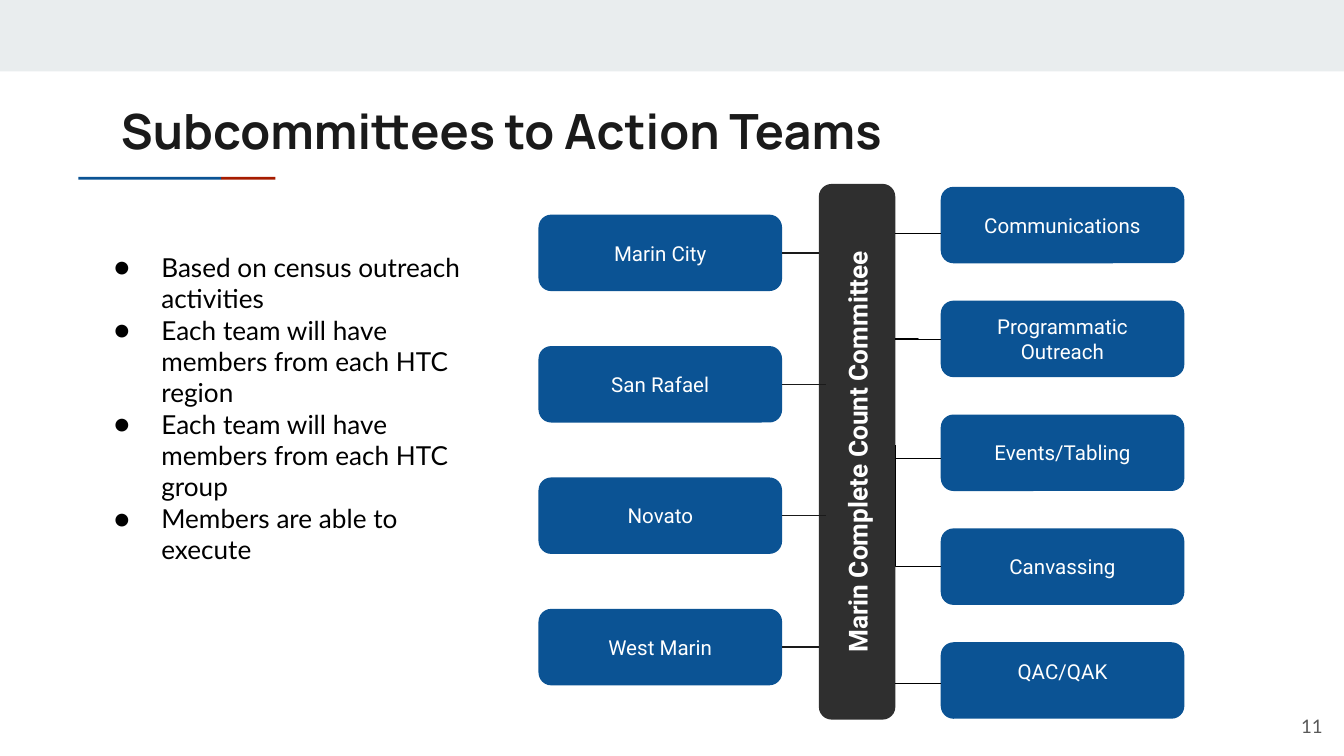
from lxml import etree
from pptx import Presentation
from pptx.dml.color import RGBColor
from pptx.enum import shapes, text
from pptx.oxml import ns
from pptx.util import Pt

# Content
TITLE = "Subcommittees to Action Teams"
POINTS = [
    "Based on census outreach activities",
    "Each team will have members from each HTC region",
    "Each team will have members from each HTC group",
    "Members are able to execute",
]
COMMITTEE = "Marin Complete Count Committee"
# Each region: name and where its line ends
REGIONS = [("Marin City", 438.7), ("San Rafael", 442.6),
           ("Novato", 442.3), ("West Marin", 438.7)]
TEAMS = ["Communications", "Programmatic Outreach", "Events/Tabling",
         "Canvassing", "QAC/QAK"]
# Start and end heights of the straight team lines
TEAM_LINES = [(125.2, 125.2), (181.7, 181.9), (245.5, 245.7), (366.3, 366.3)]
PAGE_NUMBER = "11"

BLUE, RED, DARK, INK = "0B5394", "A61C00", "2F2F2F", "1A1A1A"
BLACK, WHITE, GREY, BAND = "000000", "FFFFFF", "595959", "E9EDEE"

# Layout
BOX_W, BOX_H = 130.5, 41
REGION_X, REGION_TOP, REGION_STEP = 288.5, 115, 70.4
TEAM_X, TEAM_TOP, TEAM_STEP = 504, 100.1, 61
BAR_X, BAR_Y, BAR_W, BAR_H = 438.7, 98.5, 41, 287
BAR_RIGHT = BAR_X + BAR_W

deck = Presentation()
deck.slide_width, deck.slide_height = Pt(720), Pt(405)
page = deck.slides.add_slide(deck.slide_layouts[1])


def rgb(value):
    return RGBColor.from_string(value)


def style(para, font, size, color, bold=False, align=text.PP_ALIGN.LEFT):
    para.alignment = align
    for span in para.runs:
        span.font.name, span.font.size = font, Pt(size)
        span.font.bold, span.font.color.rgb = bold, rgb(color)


def set_frame(box, anchor=text.MSO_ANCHOR.MIDDLE):
    frame = box.text_frame
    frame.word_wrap, frame.auto_size = True, text.MSO_AUTO_SIZE.NONE
    frame.vertical_anchor = anchor
    frame.margin_left = frame.margin_right = Pt(7.2)
    frame.margin_top = frame.margin_bottom = Pt(7.2)
    return frame


def place(box, left, top, width, height):
    box.left, box.top = Pt(left), Pt(top)
    box.width, box.height = Pt(width), Pt(height)


def add_block(left, top, width, height, fill,
              kind=shapes.MSO_SHAPE.RECTANGLE):
    box = page.shapes.add_shape(kind, Pt(left), Pt(top), Pt(width), Pt(height))
    box.shadow.inherit = False
    box.fill.solid()
    box.fill.fore_color.rgb = rgb(fill)
    box.line.fill.background()
    return box


def add_label(label, left, top, width, height, fill, size=11, bold=False):
    box = add_block(left, top, width, height, fill,
                    shapes.MSO_SHAPE.ROUNDED_RECTANGLE)
    frame = set_frame(box)
    frame.text = label
    style(frame.paragraphs[0], "Roboto", size, WHITE, bold,
          text.PP_ALIGN.CENTER)
    return box


def add_line(x1, y1, x2, y2, color):
    line = page.shapes.add_connector(shapes.MSO_CONNECTOR.ELBOW,
                                     Pt(x1), Pt(y1), Pt(x2), Pt(y2))
    line.line.color.rgb, line.line.width = rgb(color), Pt(0.75)
    etree.SubElement(line._element.spPr, ns.qn("a:effectLst"))
    return line


# Top band and two-colour rule
add_block(0, 0, 720, 38.3, BAND)
add_block(118.5, 94.7, 29, 1.5, RED)
add_block(42, 94.7, 76.5, 1.5, BLUE)

# Title
title = page.shapes.title
place(title, 57.6, 46.8, 605.5, 42.5)
frame = set_frame(title, text.MSO_ANCHOR.TOP)
frame.text = TITLE
style(frame.paragraphs[0], "Manrope", 26, INK, bold=True)

# Bulleted list
body = page.placeholders[1]
place(body, 43.2, 127.4, 219.6, 237.6)
frame = set_frame(body, text.MSO_ANCHOR.TOP)
frame.text = "\n".join(POINTS)
for para in frame.paragraphs:
    props = para._p.get_or_add_pPr()
    props.set("marL", str(Pt(36)))
    props.set("indent", str(Pt(-25.2)))
    color = etree.SubElement(props, ns.qn("a:buClr"))
    etree.SubElement(color, ns.qn("a:srgbClr"), val=BLACK)
    etree.SubElement(props, ns.qn("a:buFont"), typeface="Lato")
    etree.SubElement(props, ns.qn("a:buChar"), char="●")
    para.space_before = Pt(0)
    style(para, "Lato", 14, BLACK)

# Page number
number = page.shapes.add_textbox(Pt(672.5), Pt(373.7), Pt(43.2), Pt(31))
frame = set_frame(number)
frame.text = PAGE_NUMBER
style(frame.paragraphs[0], "Lato", 10, GREY, align=text.PP_ALIGN.RIGHT)

# Committee bar, turned to read upwards
bar = add_label(COMMITTEE, BAR_X + (BAR_W - BAR_H) / 2,
                BAR_Y + (BAR_H - BAR_W) / 2, BAR_H, BAR_W, DARK, 14, True)
bar.rotation = 270

# Regions on the left, each joined to the bar
for i, (region, line_end) in enumerate(REGIONS):
    top = REGION_TOP + i * REGION_STEP
    middle = top + BOX_H / 2
    add_label(region, REGION_X, top, BOX_W, BOX_H, BLUE)
    add_line(REGION_X + BOX_W, middle, line_end, middle, INK)

# Action teams on the right
for i, team in enumerate(TEAMS):
    box = add_label(team, TEAM_X, TEAM_TOP + i * TEAM_STEP, BOX_W, BOX_H, BLUE)
box.text_frame.vertical_anchor = text.MSO_ANCHOR.TOP  # last team sits high

for start, end in TEAM_LINES:
    add_line(BAR_RIGHT, start, TEAM_X, end, BLACK)

# Canvassing joins the bar with a single corner
corner = add_line(TEAM_X, 303.6, BAR_RIGHT, 238.5, BLACK)
corner._element.spPr.find(ns.qn("a:prstGeom")).set("prst", "bentConnector2")

deck.save("out.pptx")
